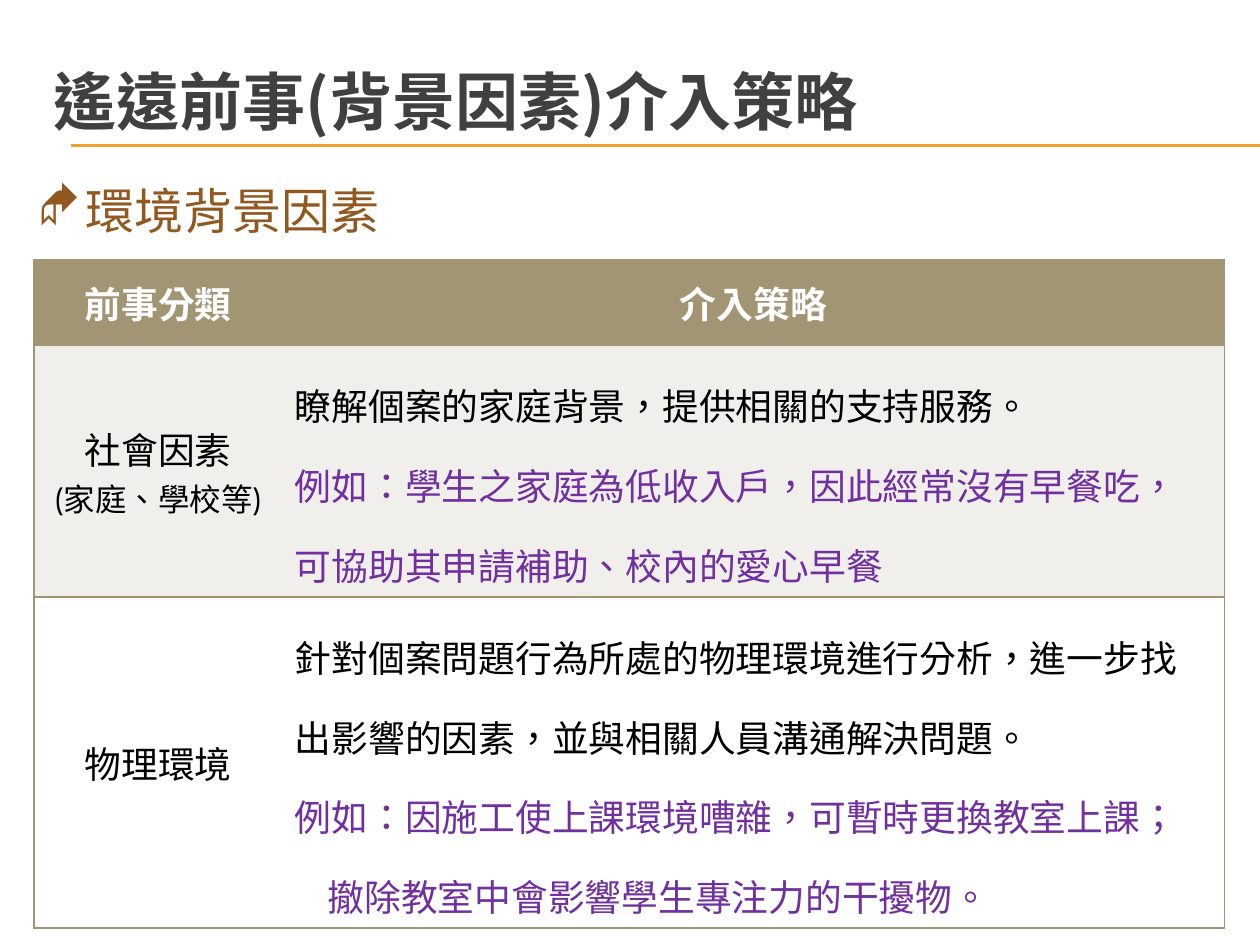
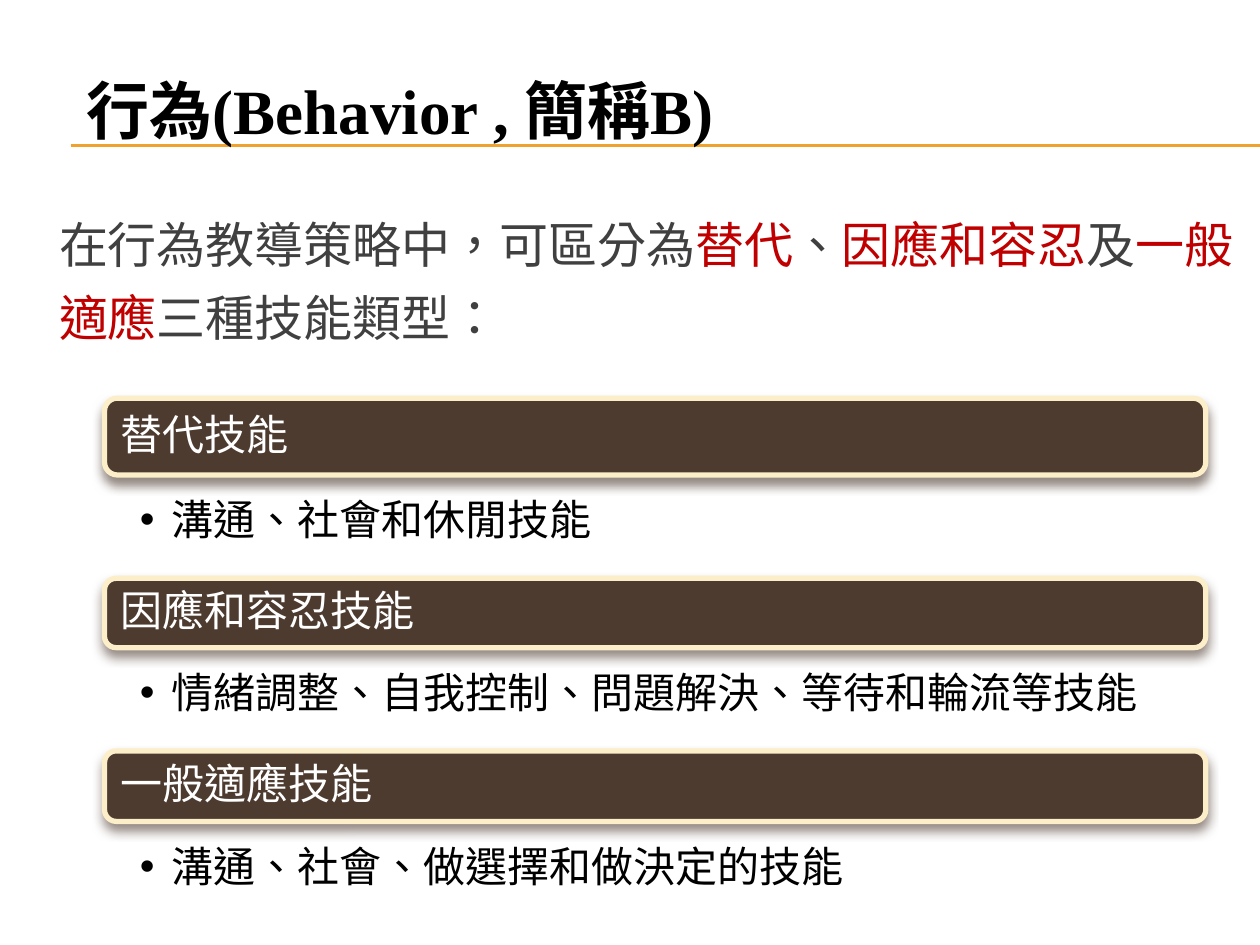
from dataclasses import dataclass

import lxml.etree
import pptx
import pptx.dml.color
import pptx.enum.dml
import pptx.enum.lang
import pptx.enum.shapes
import pptx.enum.text
import pptx.oxml.ns
import pptx.util

Inches = pptx.util.Inches
Pt = pptx.util.Pt
RGBColor = pptx.dml.color.RGBColor
Anchor = pptx.enum.text.MSO_ANCHOR
Align = pptx.enum.text.PP_ALIGN
qn = pptx.oxml.ns.qn

WHITE = RGBColor(0xFF, 0xFF, 0xFF)
BLACK = RGBColor(0, 0, 0)
CHARCOAL = RGBColor(0x40, 0x40, 0x40)
AMBER = RGBColor(0xF0, 0xA2, 0x2E)
KHAKI = RGBColor(0xA1, 0x95, 0x74)
PALE = RGBColor(0xF0, 0xEF, 0xEB)
PURPLE = RGBColor(0x70, 0x30, 0xA0)
RUST = RGBColor(0x91, 0x58, 0x1F)
RED = RGBColor(0xC0, 0, 0)
BROWN = RGBColor(0x4E, 0x3B, 0x30)
CREAM = RGBColor(0xFB, 0xEE, 0xC9)

CJK_FONT = "Noto Sans CJK SC"
TABLE_FONT = "Cabin"
TITLE_SIZE = 36
RULE_TOPS = (1.15, 1.16)
SKILL_LEFT, SKILL_WIDTH = 0.83, 8.74
DETAIL_HEIGHT = 0.82


@dataclass(frozen=True)
class Box:
    left: float
    top: float
    width: float
    height: float

    def lengths(self) -> tuple:
        return tuple(map(Inches, (self.left, self.top, self.width, self.height)))


@dataclass(frozen=True)
class Para:
    segments: tuple[tuple[str, RGBColor], ...]
    size: float
    font: str = CJK_FONT
    bold: bool = False
    align: Align = Align.LEFT
    spacing: float = 1.0
    before: float = 0
    margin: float = 0
    indent: float = 0
    bullet: str = ""
    bullet_font: str = "Arial"


@dataclass(frozen=True)
class Skill:
    name: str
    examples: str
    height: float


SKILLS = (
    Skill("替代技能", "溝通、社會和休閒技能", 0.61),
    Skill("因應和容忍技能", "情緒調整、自我控制、問題解決、等待和輪流等技能", 0.55),
    Skill("一般適應技能", "溝通、社會、做選擇和做決定的技能", 0.56),
)


def heading(text: str) -> Para:
    return Para(((text, WHITE),), 21, TABLE_FONT, bold=True, align=Align.CENTER)


def category(text: str, size: float = 21) -> Para:
    return Para(((text, BLACK),), size, TABLE_FONT, align=Align.CENTER)


def strategy(text: str, color: RGBColor = BLACK, margin: float = 0) -> Para:
    return Para(((text, color),), 21, TABLE_FONT, spacing=1.5, margin=margin)


STRATEGY_ROWS = (
    (0.68, KHAKI, (heading("前事分類"),), (heading("介入策略"),)),
    (
        1.73,
        PALE,
        (category("社會因素"), category("(家庭、學校等)", 18)),
        (
            strategy("瞭解個案的家庭背景，提供相關的支持服務。"),
            strategy("例如：學生之家庭為低收入戶，因此經常沒有早餐吃，可協助其申請補助、校內的愛心早餐", PURPLE),
        ),
    ),
    (
        2.28,
        WHITE,
        (category("物理環境"),),
        (
            strategy("針對個案問題行為所處的物理環境進行分析，進一步找出影響的因素，並與相關人員溝通解決問題。"),
            strategy("例如：因施工使上課環境嘈雜，可暫時更換教室上課；", PURPLE),
            strategy("撤除教室中會影響學生專注力的干擾物。", PURPLE, 0.26),
        ),
    ),
)


def add_xml(parent, tag: str, **attributes: str):
    return lxml.etree.SubElement(parent, qn(tag), attributes)


def write_paragraph(paragraph, para: Para) -> None:
    paragraph.alignment = para.align
    paragraph.line_spacing = para.spacing
    paragraph.space_before = Pt(para.before)
    properties = paragraph._p.get_or_add_pPr()
    properties.set("marL", str(Inches(para.margin)))
    properties.set("indent", str(Inches(para.indent)))
    if para.bullet:
        add_xml(properties, "a:buFont", typeface=para.bullet_font)
        add_xml(properties, "a:buChar", char=para.bullet)
    for text, color in para.segments:
        run = paragraph.add_run()
        run.text = text
        run.font.size = Pt(para.size)
        run.font.bold = para.bold
        run.font.color.rgb = color
        run.font.name = para.font
        run.font.language_id = pptx.enum.lang.MSO_LANGUAGE_ID.TRADITIONAL_CHINESE
        add_xml(run._r.get_or_add_rPr(), "a:ea", typeface=CJK_FONT)


def write_text(frame, paras: tuple[Para, ...]) -> None:
    for index, para in enumerate(paras):
        write_paragraph(frame.add_paragraph() if index else frame.paragraphs[0], para)


def set_insets(frame, left: float, top: float, right: float, bottom: float) -> None:
    frame.margin_left, frame.margin_top = Inches(left), Inches(top)
    frame.margin_right, frame.margin_bottom = Inches(right), Inches(bottom)


def add_text(slide, box: Box, para: Para, anchor: Anchor = Anchor.TOP):
    frame = slide.shapes.add_textbox(*box.lengths()).text_frame
    frame.word_wrap = True
    frame.vertical_anchor = anchor
    write_text(frame, (para,))
    return frame


def add_slide(deck):
    slide = deck.slides.add_slide(deck.slide_layouts[6])
    slide.background.fill.solid()
    slide.background.fill.fore_color.rgb = WHITE
    for top in RULE_TOPS:
        rule = slide.shapes.add_connector(
            pptx.enum.shapes.MSO_CONNECTOR.STRAIGHT,
            Inches(0.56), Inches(top), Inches(10), Inches(top),
        )
        rule.line.color.rgb = AMBER
        rule.line.width = Pt(0.75)
        add_xml(rule._element.spPr, "a:effectLst")
    return slide


def add_title(slide, box: Box, text: str, color: RGBColor, font: str, anchor: Anchor) -> None:
    add_text(slide, box, Para(((text, color),), TITLE_SIZE, font, bold=True), anchor)


def set_borders(cell, visible: str) -> None:
    properties = cell._tc.get_or_add_tcPr()
    for side in "LRTB":
        border = add_xml(properties, f"a:ln{side}", w=str(Pt(1)))
        if side in visible:
            add_xml(add_xml(border, "a:solidFill"), "a:srgbClr", val=str(KHAKI))
        else:
            add_xml(border, "a:noFill")


def add_strategy_table(slide, box: Box, widths: tuple[float, ...]) -> None:
    table = slide.shapes.add_table(len(STRATEGY_ROWS), len(widths), *box.lengths()).table
    table.first_row = table.horz_banding = False
    for column, width in zip(table.columns, widths):
        column.width = Inches(width)
    for row, (height, fill, *contents) in zip(table.rows, STRATEGY_ROWS):
        row.height = Inches(height)
        for cell, paras, visible in zip(row.cells, contents, ("LTB", "RTB")):
            set_borders(cell, visible)
            cell.fill.solid()
            cell.fill.fore_color.rgb = fill
            cell.vertical_anchor = Anchor.MIDDLE
            write_text(cell.text_frame, paras)


def add_shadow(shape) -> None:
    shape.shadow.inherit = False
    effects = shape._element.spPr.find(qn("a:effectLst"))
    shadow = add_xml(
        effects, "a:outerShdw", blurRad=str(Pt(6)), dist=str(Pt(4)),
        dir="5400000", algn="ctr", rotWithShape="0",
    )
    color = add_xml(shadow, "a:srgbClr", val=str(BROWN))
    add_xml(color, "a:alpha", val="60000")


def add_skill(slide, skill: Skill, top: float) -> None:
    banner = slide.shapes.add_shape(
        pptx.enum.shapes.MSO_SHAPE.ROUNDED_RECTANGLE,
        *Box(SKILL_LEFT, top, SKILL_WIDTH, skill.height).lengths(),
    )
    banner.fill.solid()
    banner.fill.fore_color.rgb = BROWN
    banner.line.color.rgb = CREAM
    banner.line.width = Pt(3)
    add_shadow(banner)
    frame = banner.text_frame
    frame.vertical_anchor = Anchor.MIDDLE
    set_insets(frame, 0.1, 0.1, 0.1, 0.1)
    write_text(frame, (Para(((skill.name, WHITE),), 24, spacing=0.9),))

    examples = Para(
        ((skill.examples, BLACK),), 24, spacing=1.3,
        margin=0.25, indent=-0.25, bullet="•",
    )
    details = add_text(
        slide, Box(SKILL_LEFT, top + skill.height, SKILL_WIDTH, DETAIL_HEIGHT), examples
    )
    set_insets(details, 0.28, 0.03, 0.19, 0.03)


def build_antecedents(deck) -> None:
    slide = add_slide(deck)
    add_strategy_table(slide, Box(0.27, 2.06, 9.45, 4.69), (1.97, 7.48))
    topic = Para(
        (("環境背景因素", RUST),), 28,
        margin=0.38, indent=-0.38, bullet="◆", bullet_font="Wingdings",
    )
    add_text(slide, Box(0.2, 1.38, 3.31, 0.57), topic)
    add_title(slide, Box(0.33, 0.44, 9.5, 0.71), "遙遠前事(背景因素)介入策略",
              CHARCOAL, CJK_FONT, Anchor.MIDDLE)


def build_behavior(deck) -> None:
    slide = add_slide(deck)
    intro = Para(
        (
            ("在行為教導策略中，可區分為", CHARCOAL),
            ("替代", RED),
            ("、", CHARCOAL),
            ("因應和容忍", RED),
            ("及", CHARCOAL),
            ("一般適應", RED),
            ("三種技能類型：", CHARCOAL),
        ),
        28, spacing=1.23, before=4, margin=0.09,
    )
    add_text(slide, Box(0.28, 1.55, 9.72, 1.34), intro)
    top = 3.16
    for skill in SKILLS:
        add_skill(slide, skill, top)
        top += skill.height + DETAIL_HEIGHT
    add_title(slide, Box(0.59, 0.52, 7.09, 0.71), "行為(Behavior , 簡稱B)",
              BLACK, "Times New Roman", Anchor.TOP)


def main() -> None:
    deck = pptx.Presentation()
    deck.slide_width, deck.slide_height = Inches(10), Inches(7.5)
    build_antecedents(deck)
    build_behavior(deck)
    deck.save("out.pptx")


if __name__ == "__main__":
    main()
